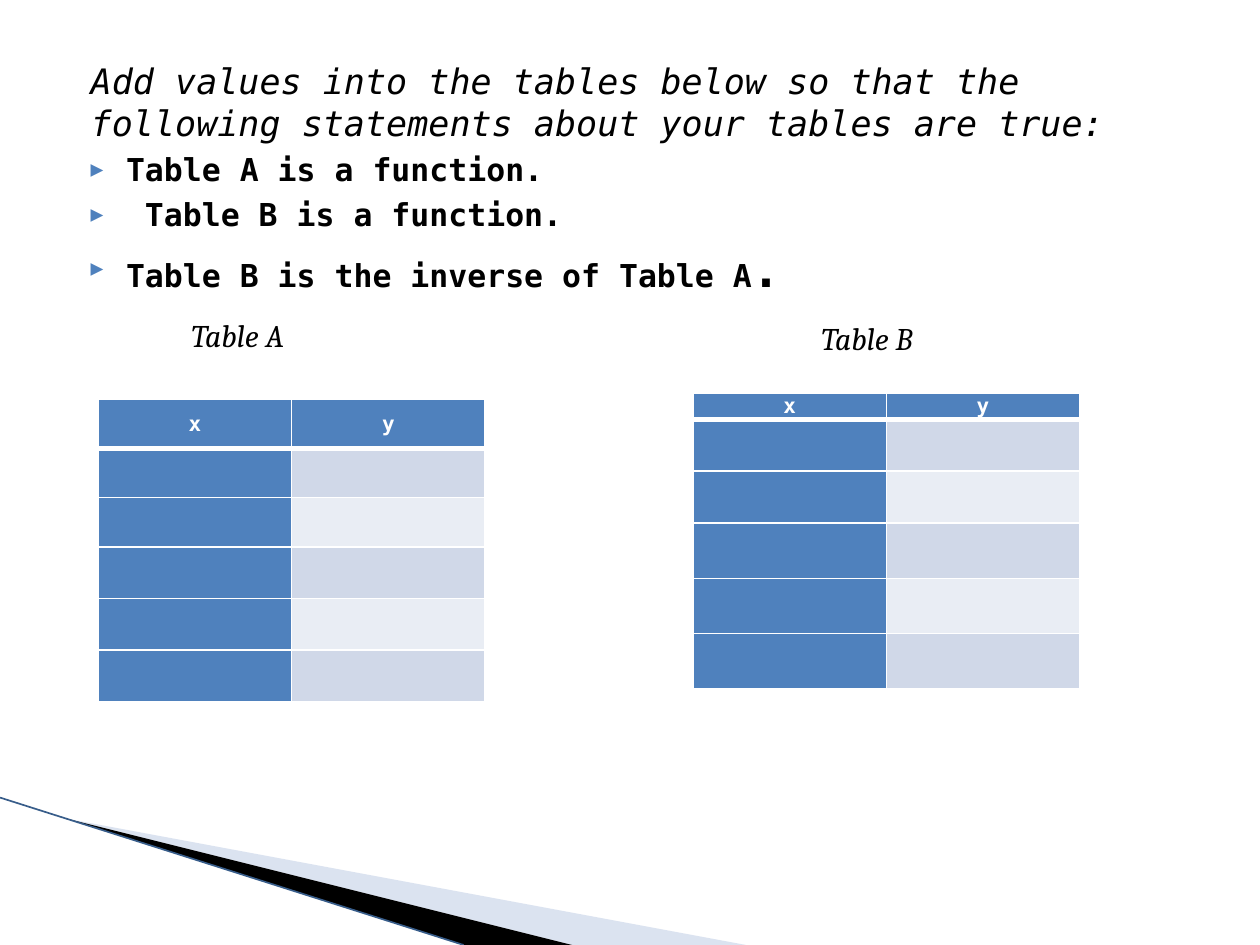
from lxml import etree
from pptx import Presentation
from pptx.dml.color import RGBColor
from pptx.enum.shapes import MSO_CONNECTOR
from pptx.enum.text import MSO_ANCHOR, MSO_AUTO_SIZE, PP_ALIGN
from pptx.oxml.ns import qn
from pptx.util import Inches, Pt

STRAIGHT = MSO_CONNECTOR.STRAIGHT
TOP, MIDDLE = MSO_ANCHOR.TOP, MSO_ANCHOR.MIDDLE
NO_FIT = MSO_AUTO_SIZE.NONE
CENTER = PP_ALIGN.CENTER

MONO, SERIF = "DejaVu Sans Mono", "Cambria"
COLORS = {
    "text": "000000", "white": "FFFFFF", "blue": "4F81BD",
    "dark": "D0D8E8", "light": "E9EDF4",
    "wedge": "A7B9DB", "band": "000000", "edge": "385D8A",
}
TASK = "Add values into the tables below so that the following statements about your tables are true:"
CLAIMS = [
    [("Table A is a function.", 18)],
    [(" Table B is a function.", 18)],
    [("Table B is the inverse of Table A", 18), (".", 27)],
]


def rgb(name):
    return RGBColor.from_string(COLORS[name])


def sub(parent, tag, **attrs):
    return etree.SubElement(parent, qn(tag), attrs)


def add_run(para, text, size, font, color="text", bold=False, italic=False):
    run = para.add_run()
    run.text = text
    face = run.font
    face.size, face.name = Pt(size), font
    face.bold, face.italic = bold, italic
    face.color.rgb = rgb(color)


def indent(para, left, first):
    props = para._p.get_or_add_pPr()
    props.set("marL", str(Inches(left)))
    props.set("indent", str(Inches(first)))
    return props


def add_bullet(para):
    props = indent(para, 0.4, -0.28)
    sub(sub(props, "a:buClr"), "a:srgbClr", val=COLORS["blue"])
    sub(props, "a:buSzPct", val="68000")
    sub(props, "a:buFont", typeface=MONO)
    sub(props, "a:buChar", char="▶")


def add_wedge(slide, points, color, alpha=None):
    spots = [(Inches(x), Inches(y)) for x, y in points]
    form = slide.shapes.build_freeform(*spots[0])
    form.add_line_segments(spots[1:], close=True)
    shape = form.convert_to_shape()
    shape.shadow.inherit = False
    shape.fill.solid()
    shape.fill.fore_color.rgb = rgb(color)
    shape.line.fill.background()
    if alpha:
        tint = shape._element.spPr.find(qn("a:solidFill"))[0]
        sub(tint, "a:alpha", val=str(alpha * 1000))


def add_corner(slide, left, top, bottom):
    """Draw the sloping bands that run off the lower left corner."""
    tip = (left + 0.54, top + 0.17)
    add_wedge(slide, [tip, (5.92, bottom), (4.54, bottom)], "wedge", 40)
    add_wedge(slide, [tip, (4.54, bottom), (3.68, bottom)], "band")
    edge = slide.shapes.add_connector(
        STRAIGHT, Inches(left), Inches(top), Inches(left + 3.68), Inches(bottom))
    edge.line.color.rgb = rgb("edge")
    edge.line.width = Pt(0.95)
    sub(edge._element.spPr, "a:effectLst")


def add_body(slide, left, top, width, height):
    body = slide.placeholders[1]
    body.left, body.top = Inches(left), Inches(top)
    body.width, body.height = Inches(width), Inches(height)
    frame = body.text_frame
    frame.auto_size, frame.vertical_anchor = NO_FIT, TOP
    para = frame.paragraphs[0]
    sub(indent(para, 0.12, 0), "a:buNone")
    para.space_before = Pt(0)
    add_run(para, TASK, 20, MONO, italic=True)
    for claim in CLAIMS:
        para = frame.add_paragraph()
        add_bullet(para)
        para.space_before = Pt(4)
        for text, size in claim:
            add_run(para, text, size, MONO, bold=True)


def add_label(slide, text, left, top):
    box = slide.shapes.add_textbox(
        Inches(left), Inches(top), Inches(1.21), Inches(0.4))
    frame = box.text_frame
    frame.word_wrap, frame.vertical_anchor = True, MIDDLE
    add_run(frame.paragraphs[0], text, 18, SERIF, italic=True)


def set_edges(cell, row):
    """Give a cell white borders, with a thick rule below the header."""
    props = cell._tc.get_or_add_tcPr()
    thick = {("a:lnB", 0), ("a:lnT", 1)}
    for tag in ("a:lnL", "a:lnR", "a:lnT", "a:lnB"):
        width = Pt(3 if (tag, row) in thick else 1)
        line = sub(props, tag, w=str(width))
        sub(sub(line, "a:solidFill"), "a:srgbClr", val=COLORS["white"])


def add_grid(slide, left, top, rows):
    """Add an x-y table with a header and empty rows of the given heights."""
    grid = slide.shapes.add_table(
        len(rows), 2, Inches(left), Inches(top),
        Inches(3.07), Inches(sum(rows))).table
    for col in grid.columns:
        col.width = Inches(3.07 / 2)
    for r, high in enumerate(rows):
        grid.rows[r].height = Inches(high)
        for c, name in enumerate("xy"):
            cell = grid.cell(r, c)
            cell.margin_left = cell.margin_right = Inches(0.07)
            cell.margin_top = cell.margin_bottom = 0
            cell.vertical_anchor = MIDDLE
            set_edges(cell, r)
            band = "dark" if r % 2 else "light"
            cell.fill.solid()
            cell.fill.fore_color.rgb = rgb("blue" if r == 0 or c == 0 else band)
            if r == 0:
                para = cell.text_frame.paragraphs[0]
                para.alignment = CENTER
                add_run(para, name, 12, MONO, "white", bold=True)


def main():
    deck = Presentation()
    deck.slide_width, deck.slide_height = Inches(10), Inches(7.5)
    slide = deck.slides.add_slide(deck.slide_layouts[1])
    title = slide.shapes.title._element
    title.getparent().remove(title)
    add_corner(slide, 0, 6.33, 7.5)
    add_body(slide, 0.5, 0.42, 9, 6.15)
    add_grid(slide, 0.78, 3.17, [0.39] * 3 + [0.41] * 3)
    add_label(slide, "Table A", 1.42, 2.46)
    add_grid(slide, 5.5, 3.12, [0.21] + [0.41] * 2 + [0.44] * 3)
    add_label(slide, "Table B", 6.42, 2.48)
    deck.save("out.pptx")


if __name__ == "__main__":
    main()
